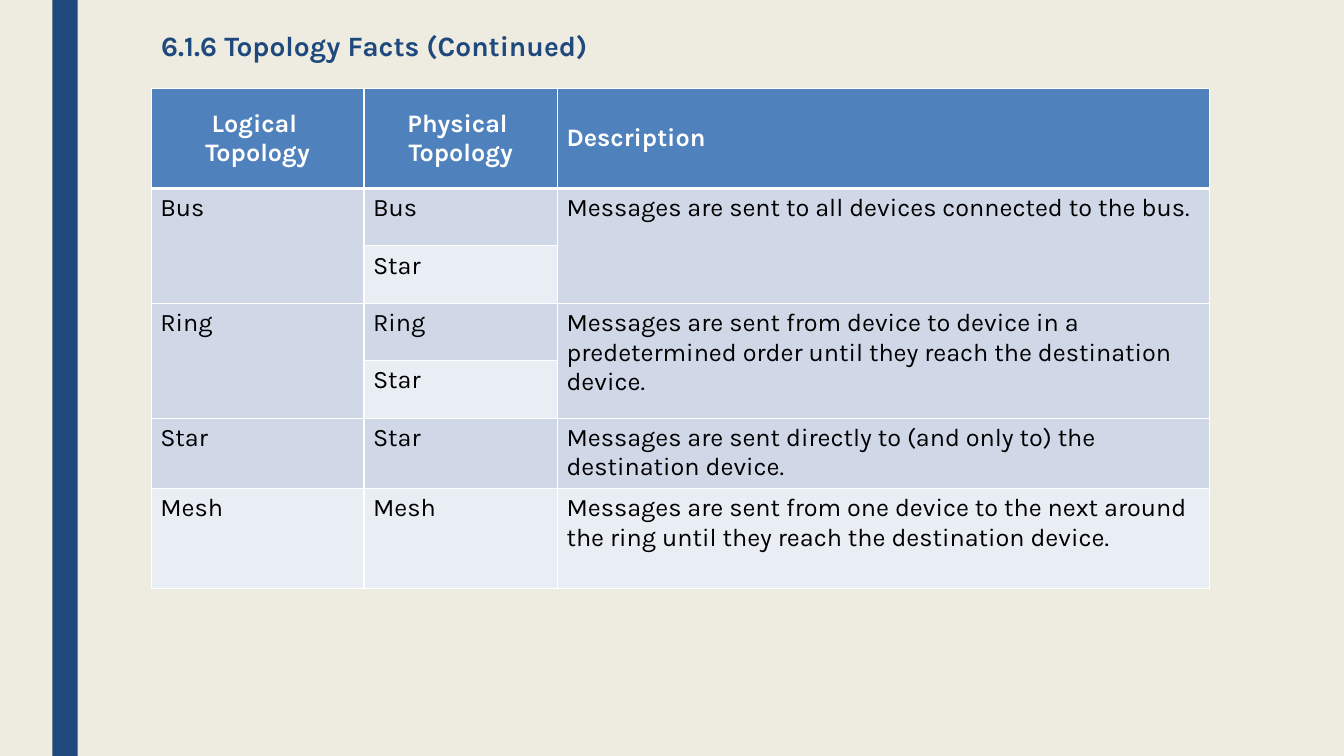
import pptx
import pptx.dml.color
import pptx.enum.shapes
import pptx.enum.text
import pptx.oxml
import pptx.oxml.ns
import pptx.util

Inches = pptx.util.Inches
RGBColor = pptx.dml.color.RGBColor
ALIGN = pptx.enum.text.PP_ALIGN
ANCHOR = pptx.enum.text.MSO_ANCHOR

CREAM = RGBColor(0xEE, 0xEC, 0xE1)
NAVY = RGBColor(0x1F, 0x49, 0x7D)
BLUE = RGBColor(0x4F, 0x81, 0xBD)
BAND_DARK = RGBColor(0xD0, 0xD8, 0xE8)
BAND_LIGHT = RGBColor(0xE9, 0xED, 0xF4)
WHITE = RGBColor(0xFF, 0xFF, 0xFF)
BLACK = RGBColor(0, 0, 0)

HEADERS = ["Logical \nTopology", "Physical \nTopology", "Description"]
# Logical topology, its physical topologies, description, fill
TOPOLOGIES = [
    ("Bus", ["Bus", "Star"],
     "Messages are sent to all devices connected to the bus.", BAND_DARK),
    ("Ring", ["Ring", "Star"],
     "Messages are sent from device to device in a predetermined order "
     "until they reach the destination device.", BAND_DARK),
    ("Star", ["Star"],
     "Messages are sent directly to (and only to) the destination device.", BAND_DARK),
    ("Mesh", ["Mesh"],
     "Messages are sent from one device to the next around the ring "
     "until they reach the destination device.", BAND_LIGHT),
]
COLUMN_WIDTHS = [2.11, 1.92, 6.47]
ROW_HEIGHTS = [0.99] + [0.57] * 5 + [0.99]


def write_text(frame, text, size=18, color=BLACK, bold=False,
               align=ALIGN.LEFT, spacing=None, font="Karla"):
    """Fill a text frame, one paragraph for each line of text."""
    frame.word_wrap = True
    for index, line in enumerate(text.split("\n")):
        para = frame.add_paragraph() if index else frame.paragraphs[0]
        para.alignment = align
        if spacing:
            para.line_spacing = spacing
        span = para.add_run()
        span.text = line
        span.font.name = font
        span.font.size = pptx.util.Pt(size)
        span.font.bold = bold
        span.font.color.rgb = color


class TopologyPage:
    def __init__(self, deck):
        self.page = deck.slides.add_slide(deck.slide_layouts[6])
        background = self.page.background.fill
        background.solid()
        background.fore_color.rgb = CREAM

    def bar(self, left, top, width, height, color):
        box = self.page.shapes.add_shape(
            pptx.enum.shapes.MSO_SHAPE.RECTANGLE,
            Inches(left), Inches(top), Inches(width), Inches(height))
        box.shadow.inherit = False
        box.fill.solid()
        box.fill.fore_color.rgb = color
        box.line.fill.background()

    def label(self, left, top, width, height, text, **style):
        box = self.page.shapes.add_textbox(
            Inches(left), Inches(top), Inches(width), Inches(height))
        write_text(box.text_frame, text, **style)

    def table(self, left, top, widths, heights):
        grid = self.page.shapes.add_table(
            len(heights), len(widths), Inches(left), Inches(top),
            Inches(sum(widths)), Inches(sum(heights))).table
        for column, width in zip(grid.columns, widths):
            column.width = Inches(width)
        for row, height in zip(grid.rows, heights):
            row.height = Inches(height)
        return grid

    def cell(self, cell, fill, text="", anchor=ANCHOR.TOP, bottom=1, **style):
        cell.margin_left = cell.margin_right = Inches(0.09)
        cell.margin_top = cell.margin_bottom = Inches(0.05)
        cell.vertical_anchor = anchor
        properties = cell._tc.get_or_add_tcPr()
        for side, points in (("L", 1), ("R", 1), ("T", 1), ("B", bottom)):
            properties.append(pptx.oxml.parse_xml(
                f'<a:ln{side} {pptx.oxml.ns.nsdecls("a")} w="{pptx.util.Pt(points)}">'
                f'<a:solidFill><a:srgbClr val="{WHITE}"/></a:solidFill></a:ln{side}>'))
        cell.fill.solid()
        cell.fill.fore_color.rgb = fill
        if text:
            write_text(cell.text_frame, text, **style)


def main():
    deck = pptx.Presentation()
    deck.slide_width = Inches(13.33)
    deck.slide_height = Inches(7.5)
    slide = TopologyPage(deck)

    # Side bar and title
    slide.bar(0.52, 0, 0.25, 7.5, NAVY)
    slide.label(1.5, 0.27, 10.5, 0.5, "6.1.6 Topology Facts (Continued)",
                size=20, color=NAVY, bold=True, spacing=0.89)

    # Table header
    grid = slide.table(1.5, 0.88, COLUMN_WIDTHS, ROW_HEIGHTS)
    for column, header in enumerate(HEADERS):
        slide.cell(grid.cell(0, column), BLUE, header, anchor=ANCHOR.MIDDLE,
                   bottom=3, color=WHITE, bold=True,
                   align=ALIGN.LEFT if column == 2 else ALIGN.CENTER)

    # Table body: outer columns span all physical topologies of a group
    row = 1
    for logical, physicals, description, fill in TOPOLOGIES:
        for offset, physical in enumerate(physicals):
            texts = ("" if offset else logical, physical, "" if offset else description)
            for column, text in enumerate(texts):
                slide.cell(grid.cell(row + offset, column),
                           BAND_LIGHT if offset else fill, text)
        last = row + len(physicals) - 1
        if last > row:
            for column in (0, 2):
                grid.cell(row, column).merge(grid.cell(last, column))
        row = last + 1

    deck.save("out.pptx")


if __name__ == "__main__":
    main()
